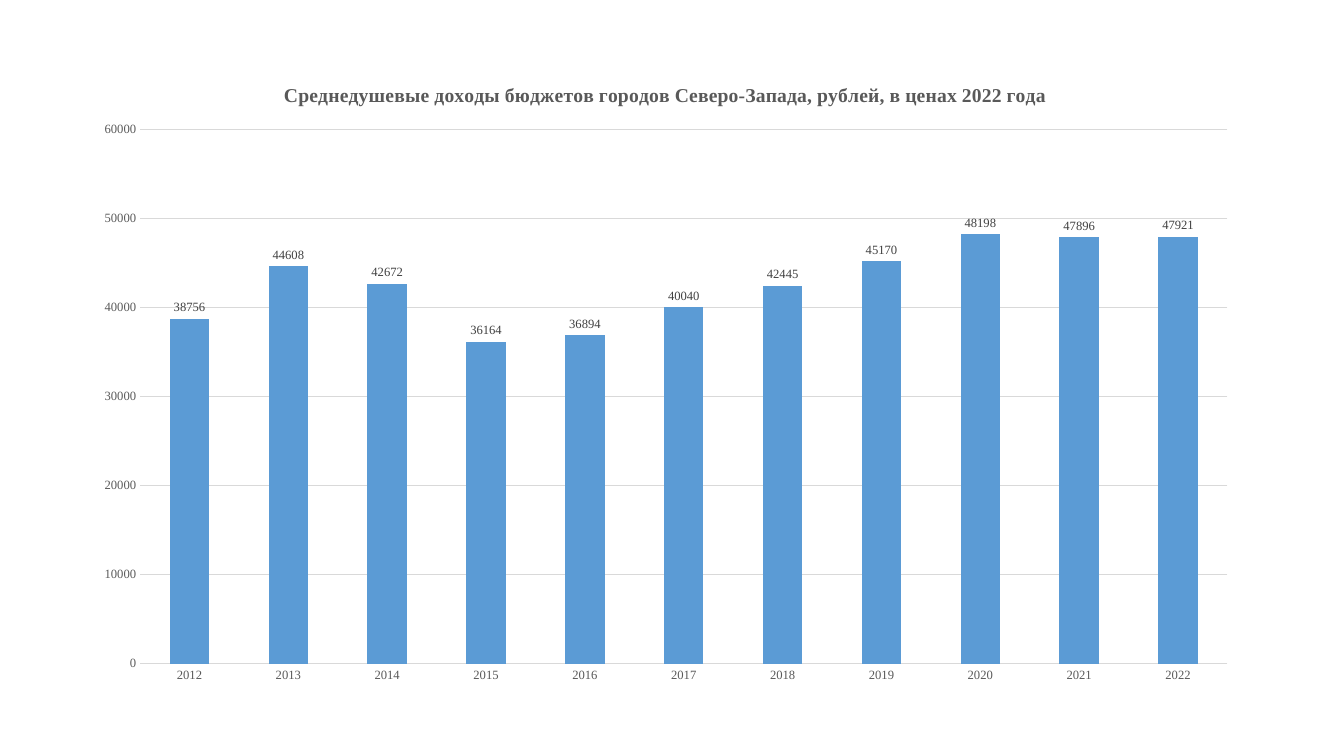
"""Build a slide with a column chart of per-capita city budget revenues, 2012-2022."""
from lxml import etree
from pptx import Presentation
from pptx.chart.data import CategoryChartData
from pptx.dml.color import RGBColor
from pptx.enum.chart import XL_CHART_TYPE, XL_LABEL_POSITION, XL_TICK_MARK
from pptx.oxml.ns import qn
from pptx.util import Pt

COLUMNS = XL_CHART_TYPE.COLUMN_CLUSTERED
OUTSIDE_END = XL_LABEL_POSITION.OUTSIDE_END
NO_TICK = XL_TICK_MARK.NONE
FONT = "Times New Roman"
GREY, PALE, DARK, BLUE = "595959", "D9D9D9", "404040", "5B9BD5"
BLANK_LAYOUT = 6


def rgb(value):
    return RGBColor.from_string(value)


def write(holder, text=None, size=9, color=GREY, bold=False):
    if text:
        holder.text = text
        holder = holder.paragraphs[0].runs[0]
    font = holder.font
    font.name, font.size, font.bold = FONT, Pt(size), bold
    font.color.rgb = rgb(color)


presentation = Presentation()
presentation.slide_width, presentation.slide_height = Pt(960), Pt(540)
slide = presentation.slides.add_slide(presentation.slide_layouts[BLANK_LAYOUT])

revenues = CategoryChartData(number_format="0")
revenues.categories = [str(year) for year in range(2012, 2023)]
revenues.add_series("Среднедушевые доходы", [
    38756, 44608, 42672, 36164, 36894, 40040, 42445, 45170, 48198, 47896, 47921])
chart = slide.shapes.add_chart(
    COLUMNS, Pt(58.3), Pt(42.5), Pt(835.2), Pt(454.3), revenues).chart
chart.has_legend = False
write(chart, size=10, color="000000")

chart.has_title = True
write(chart.chart_title.text_frame,
      "Среднедушевые доходы бюджетов городов Северо-Запада, рублей, в ценах 2022 года",
      size=14, bold=True)

years, rubles = chart.category_axis, chart.value_axis
for axis in (years, rubles):
    axis.major_tick_mark = axis.minor_tick_mark = NO_TICK
    write(axis.tick_labels)
years.has_major_gridlines = False
rubles.has_major_gridlines = True
rubles.minimum_scale, rubles.maximum_scale, rubles.major_unit = 0, 60000, 10000
rubles.tick_labels.number_format = "0"
rubles.tick_labels.number_format_is_linked = False
rubles.format.line.fill.background()
for line in (years.format.line, rubles.major_gridlines.format.line):
    line.color.rgb = rgb(PALE)
    line.width = Pt(0.75)

plot = chart.plots[0]
plot.gap_width = 150
plot.vary_by_categories = False
bars = plot.series[0]
bars.format.fill.solid()
bars.format.fill.fore_color.rgb = rgb(BLUE)
bars.invert_if_negative = False
plot.has_data_labels = True
labels = plot.data_labels
labels.show_value = True
labels.position = OUTSIDE_END
labels.number_format, labels.number_format_is_linked = "0", False
write(labels, color=DARK)

placements = [
    ("c:title", 1, {"xMode": "edge", "yMode": "edge", "x": 0.17, "y": 0.03}),
    ("c:plotArea", 0, {"layoutTarget": "inner", "xMode": "edge", "yMode": "edge",
                       "x": 0.05, "y": 0.11, "w": 0.93, "h": 0.84}),
]
for tag, index, settings in placements:
    part = chart.element.find(qn("c:chart")).find(qn(tag))
    for old in part.findall(qn("c:layout")):
        part.remove(old)
    layout = etree.Element(qn("c:layout"))
    manual = etree.SubElement(layout, qn("c:manualLayout"))
    for key, value in settings.items():
        etree.SubElement(manual, qn(f"c:{key}")).set("val", str(value))
    part.insert(index, layout)

presentation.save("out.pptx")
